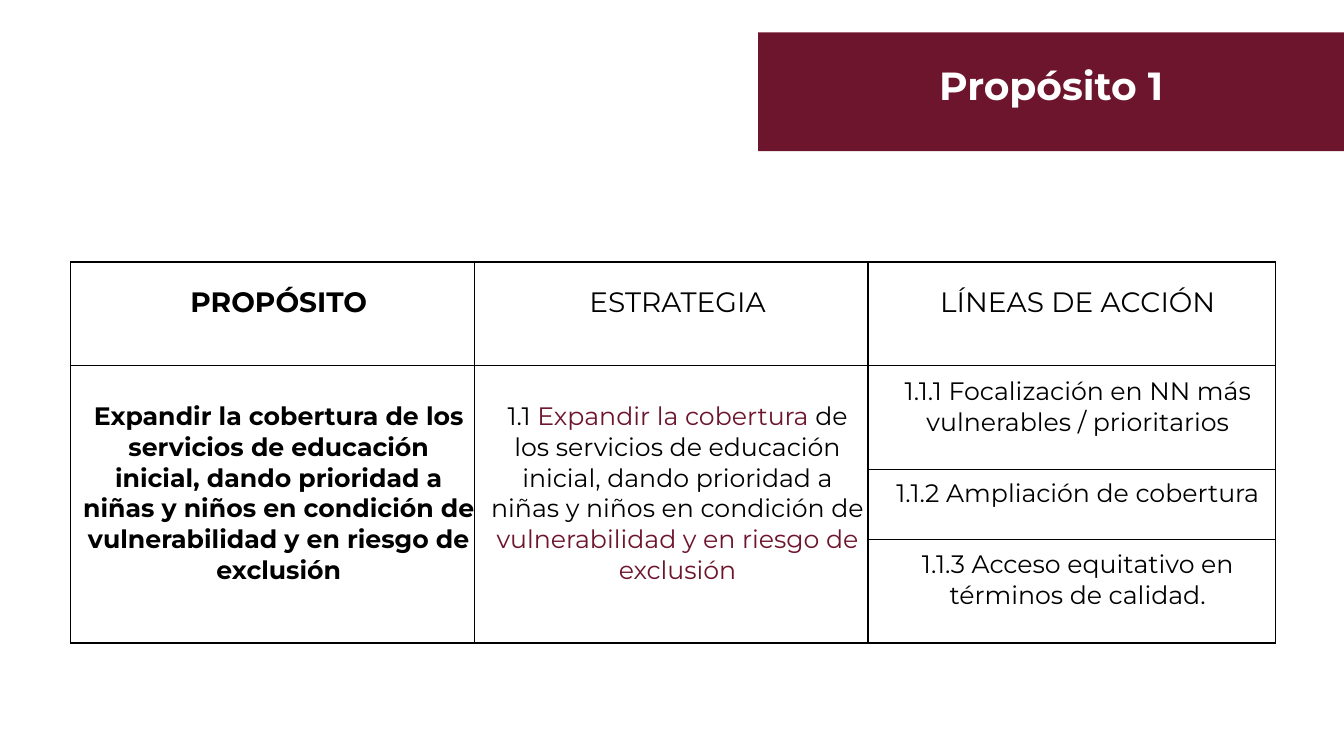
from lxml import etree
from pptx import Presentation
from pptx.dml.color import RGBColor
from pptx.enum.text import MSO_ANCHOR as Anchor, MSO_AUTO_SIZE as Fit, PP_ALIGN as Align
from pptx.oxml.ns import qn
from pptx.util import Inches, Pt

WINE = RGBColor(0x6E, 0x15, 0x2E)
BLACK = RGBColor(0, 0, 0)
WHITE = RGBColor(0xFF, 0xFF, 0xFF)
FONT = "Montserrat"

COLS = [4.01, 3.9, 4.04]
ROWS = [1.03, 1.03, 0.69, 1.03]
HEADS = ["PROPÓSITO", "ESTRATEGIA", "LÍNEAS DE ACCIÓN"]
GOAL = ("Expandir la cobertura de los servicios de educación inicial, dando prioridad "
        "a niñas y niños en condición de vulnerabilidad y en riesgo de exclusión")
PLAN = [
    ("1.1 ", BLACK),
    ("Expandir la cobertura ", WINE),
    ("de los servicios de educación inicial, dando prioridad a niñas y niños "
     "en condición de ", BLACK),
    ("vulnerabilidad y en riesgo de exclusión", WINE),
]
LINES = [
    "1.1.1 Focalización en NN más vulnerables / prioritarios",
    "1.1.2 Ampliación de cobertura",
    "1.1.3 Acceso equitativo en términos de calidad.",
]


def add_text(frame, text, size=18, bold=False, color=BLACK):
    """Append a centred run to the first paragraph of a text frame."""
    para = frame.paragraphs[0]
    para.alignment = Align.CENTER
    run = para.add_run()
    run.text = text
    font = run.font
    font.name, font.size, font.bold = FONT, Pt(size), bold
    font.color.rgb = color


def add_title(slide, left, top, width, height):
    title = slide.shapes.title
    title.left, title.top = Inches(left), Inches(top)
    title.width, title.height = Inches(width), Inches(height)
    title.fill.solid()
    title.fill.fore_color.rgb = WINE
    frame = title.text_frame
    frame.auto_size = Fit.NONE
    frame.word_wrap = True
    frame.vertical_anchor = Anchor.MIDDLE
    frame.margin_bottom = Inches(0.12)
    add_text(frame, "Propósito 1", size=28, bold=True, color=WHITE)
    frame.paragraphs[0].line_spacing = 0.9


def style_cell(cell):
    cell.margin_left, cell.margin_right = Inches(0.12), 0
    cell.margin_top, cell.margin_bottom = Inches(0.03), Inches(0.25)
    cell.vertical_anchor = Anchor.MIDDLE
    # Borders come before the fill in the cell properties
    props = cell._tc.get_or_add_tcPr()
    for side in ("lnL", "lnR", "lnT", "lnB"):
        line = etree.SubElement(props, qn(f"a:{side}"), w=str(Pt(1)))
        fill = etree.SubElement(line, qn("a:solidFill"))
        etree.SubElement(fill, qn("a:srgbClr"), val=str(BLACK))
    cell.fill.background()


def add_grid(slide, left, top):
    shape = slide.shapes.add_table(
        len(ROWS), len(COLS), Inches(left), Inches(top),
        Inches(sum(COLS)), Inches(sum(ROWS)))
    table = shape.table
    table.first_row = table.horz_banding = False
    for col, width in zip(table.columns, COLS):
        col.width = Inches(width)
    for row, height in zip(table.rows, ROWS):
        row.height = Inches(height)
    for cell in table.iter_cells():
        style_cell(cell)

    # Header row
    for col, head in enumerate(HEADS):
        add_text(table.cell(0, col).text_frame, head, size=20, bold=col == 0)

    # Purpose and strategy span all the lines of action
    for col in (0, 1):
        table.cell(1, col).merge(table.cell(len(LINES), col))
    add_text(table.cell(1, 0).text_frame, GOAL, bold=True)
    for text, color in PLAN:
        add_text(table.cell(1, 1).text_frame, text, color=color)

    # Lines of action
    for row, text in enumerate(LINES, 1):
        add_text(table.cell(row, 2).text_frame, text)


def main():
    prs = Presentation()
    prs.slide_width, prs.slide_height = Inches(13.33), Inches(7.5)
    slide = prs.slides.add_slide(prs.slide_layouts[5])
    add_title(slide, 7.52, 0.32, 5.81, 1.18)
    add_grid(slide, 0.7, 2.6)
    prs.save("out.pptx")


if __name__ == "__main__":
    main()
